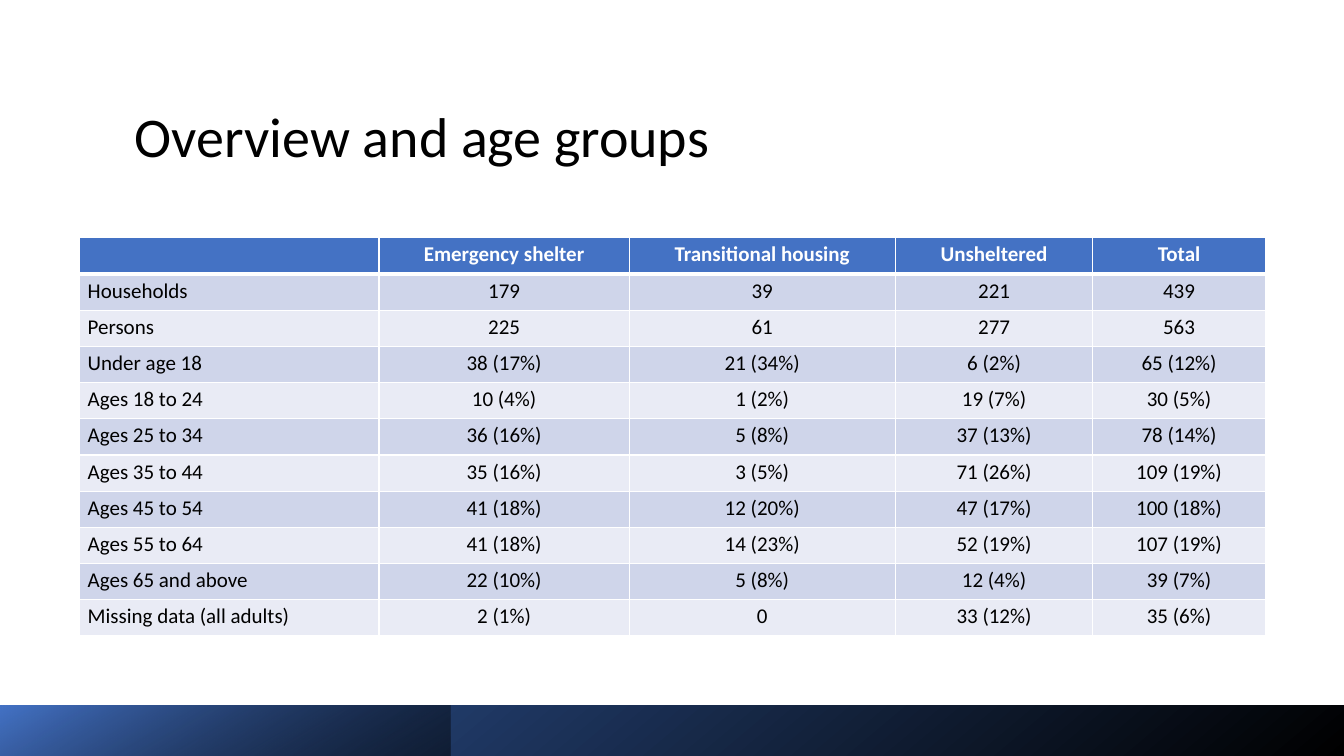
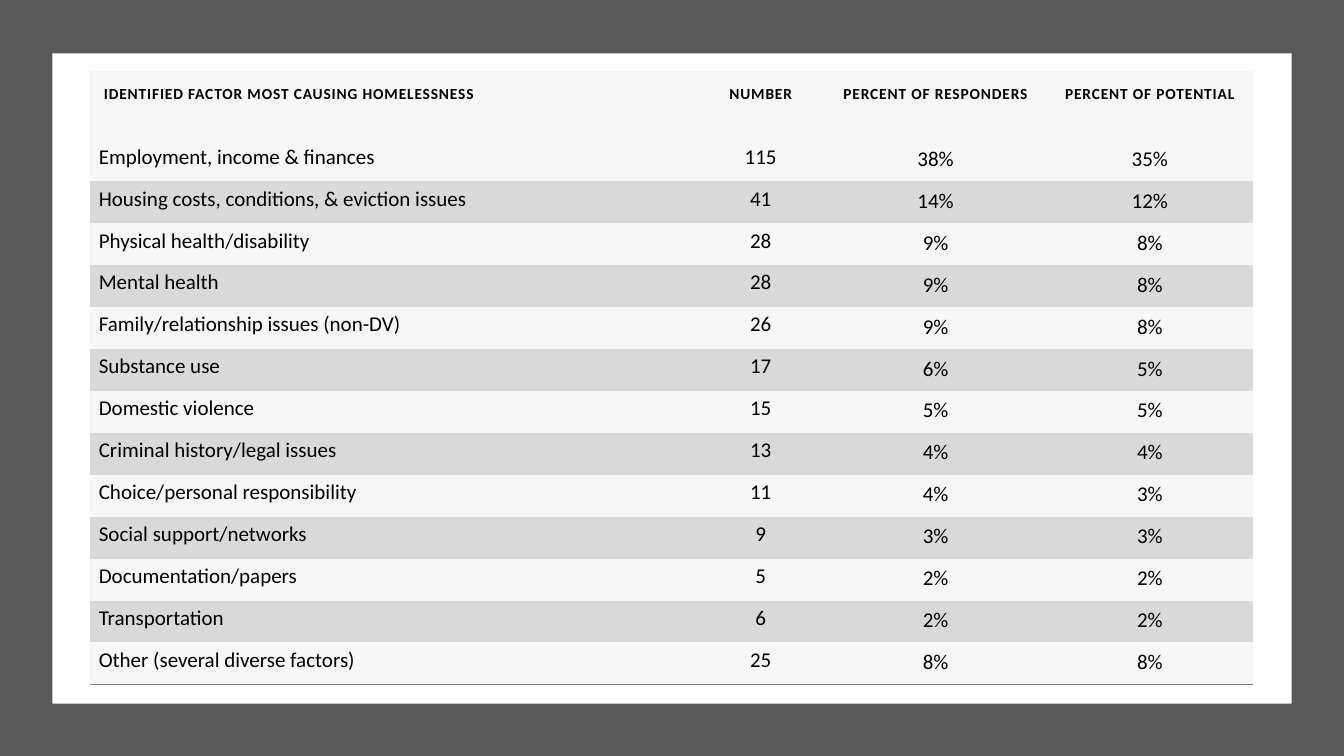
import pptx
import pptx.util
import pptx.dml.color
import pptx.enum.shapes
import pptx.enum.text
from lxml import etree

Inches, Pt = pptx.util.Inches, pptx.util.Pt
RGBColor = pptx.dml.color.RGBColor
Align, Anchor = pptx.enum.text.PP_ALIGN, pptx.enum.text.MSO_ANCHOR

# Shared look
WIDTH, HEIGHT = 13.33, 7.5
FONT = "Calibri"
BLACK = RGBColor(0x00, 0x00, 0x00)
WHITE = RGBColor(0xFF, 0xFF, 0xFF)
BLUE = RGBColor(0x44, 0x72, 0xC4)
NAVY = RGBColor(0x2F, 0x55, 0x97)
BLUE_BAND = RGBColor(0xCF, 0xD5, 0xEA)
BLUE_PALE = RGBColor(0xE9, 0xEB, 0xF5)
CHARCOAL = RGBColor(0x59, 0x59, 0x59)
GRAY = RGBColor(0x80, 0x80, 0x80)
GRAY_BAND = RGBColor(0xD9, 0xD9, 0xD9)
GRAY_PALE = RGBColor(0xF7, 0xF7, 0xF7)

TITLE_TEXT = {"size": Pt(40), "bold": False, "color": BLACK}
BODY_TEXT = {"size": Pt(15), "bold": False, "color": BLACK}
BLUE_HEADING = {"size": Pt(15), "bold": True, "color": WHITE}
SMALL_HEADING = {"size": Pt(11), "bold": True, "color": BLACK}

NO_TABLE_STYLE = "{2D5ABB26-0587-4C30-8999-92F81FD0307C}"
MARGINS = ("margin_left", "margin_top", "margin_right", "margin_bottom")
TABLE_FLAGS = {"first_row": False, "horz_banding": False}

AGE_ROWS = [
    ("", "Emergency shelter", "Transitional housing", "Unsheltered", "Total"),
    ("Households", "179", "39", "221", "439"),
    ("Persons", "225", "61", "277", "563"),
    ("Under age 18", "38 (17%)", "21 (34%)", "6 (2%)", "65 (12%)"),
    ("Ages 18 to 24", "10 (4%)", "1 (2%)", "19 (7%)", "30 (5%)"),
    ("Ages 25 to 34", "36 (16%)", "5 (8%)", "37 (13%)", "78 (14%)"),
    ("Ages 35 to 44", "35 (16%)", "3 (5%)", "71 (26%)", "109 (19%)"),
    ("Ages 45 to 54", "41 (18%)", "12 (20%)", "47 (17%)", "100 (18%)"),
    ("Ages 55 to 64", "41 (18%)", "14 (23%)", "52 (19%)", "107 (19%)"),
    ("Ages 65 and above", "22 (10%)", "5 (8%)", "12 (4%)", "39 (7%)"),
    ("Missing data (all adults)", "2 (1%)", "0", "33 (12%)", "35 (6%)"),
]

FACTOR_ROWS = [
    ("IDENTIFIED FACTOR MOST CAUSING HOMELESSNESS", "NUMBER",
     "PERCENT OF RESPONDERS", "PERCENT OF POTENTIAL"),
    ("Employment, income & finances", "115", "38%", "35%"),
    ("Housing costs, conditions, & eviction issues", "41", "14%", "12%"),
    ("Physical health/disability", "28", "9%", "8%"),
    ("Mental health", "28", "9%", "8%"),
    ("Family/relationship issues (non-DV)", "26", "9%", "8%"),
    ("Substance use", "17", "6%", "5%"),
    ("Domestic violence", "15", "5%", "5%"),
    ("Criminal history/legal issues", "13", "4%", "4%"),
    ("Choice/personal responsibility", "11", "4%", "3%"),
    ("Social support/networks", "9", "3%", "3%"),
    ("Documentation/papers", "5", "2%", "2%"),
    ("Transportation", "6", "2%", "2%"),
    ("Other (several diverse factors)", "25", "8%", "8%"),
]


def apply(target, values):
    for name, value in values.items():
        setattr(target, name, value)


def write(para, text, style):
    span = para.add_run()
    span.text = text
    span.font.name = FONT
    for name, value in style.items():
        if name == "color":
            span.font.color.rgb = value
        else:
            setattr(span.font, name, value)


def add_title(page, box, text):
    frame = page.shapes.add_textbox(*map(Inches, box)).text_frame
    apply(frame, {"word_wrap": True, "vertical_anchor": Anchor.MIDDLE})
    para = frame.paragraphs[0]
    para.line_spacing = 0.9
    write(para, text, TITLE_TEXT)


def add_panel(page, box, color=None):
    panel = page.shapes.add_shape(
        pptx.enum.shapes.MSO_SHAPE.RECTANGLE, *map(Inches, box))
    panel.shadow.inherit = False
    panel.line.fill.background()
    if color is not None:
        panel.fill.solid()
        panel.fill.fore_color.rgb = color
    return panel


def add_gradient_panel(page, box, end_color, angle, end=1.0, start_alpha=None):
    """Black to end_color; angle in degrees counter-clockwise."""
    panel = add_panel(page, box)
    panel.fill.gradient()
    panel.fill.gradient_angle = angle
    for stop, color, position in zip(panel.fill.gradient_stops, (BLACK, end_color), (0, end)):
        stop.color.rgb = color
        stop.position = position
    if start_alpha is not None:
        start = panel.element.xpath(".//a:gs/a:srgbClr")[0]
        etree.SubElement(start, pptx.oxml.ns.qn("a:alpha"), val=str(start_alpha * 1000))


def add_footer_band(page, box):
    left, top, width, height = box
    add_gradient_panel(page, box, NAVY, 130)
    add_gradient_panel(page, (left, top, width / 3 + 0.02, height), BLUE, 120,
                       end=0.99, start_alpha=46)


def border(cell, edges):
    """Draw the cell edges given as {side: (colour, points)}."""
    properties = cell._tc.get_or_add_tcPr()
    for side in "LRTB":
        if side in edges:
            color, points = edges[side]
            line = etree.SubElement(
                properties, pptx.oxml.ns.qn("a:ln" + side), w=str(Pt(points)))
            fill = etree.SubElement(line, pptx.oxml.ns.qn("a:solidFill"))
            etree.SubElement(fill, pptx.oxml.ns.qn("a:srgbClr"), val=str(color))


def fill_cell(cell, text, style, color, insets, align, anchor=Anchor.TOP):
    apply(cell, dict(zip(MARGINS, map(Inches, insets))))
    cell.vertical_anchor = anchor
    cell.fill.solid()
    cell.fill.fore_color.rgb = color
    para = cell.text_frame.paragraphs[0]
    para.alignment = align
    if text:
        write(para, text, style)
    else:
        # An empty cell must not stretch its row
        apply(cell, {"margin_top": 0, "margin_bottom": 0})


def add_grid(page, box, widths, rows, header_height):
    """Add an unstyled table whose body rows share the height below the header."""
    frame = page.shapes.add_table(len(rows), len(widths), *map(Inches, box))
    frame.element.xpath(".//a:tableStyleId")[0].text = NO_TABLE_STYLE
    apply(frame.table, TABLE_FLAGS)
    for column, width in zip(frame.table.columns, widths):
        column.width = Inches(width)
    body_height = (box[3] - header_height) / (len(rows) - 1)
    for index, row in enumerate(frame.table.rows):
        row.height = Inches(body_height if index else header_height)
    return frame


def add_age_table(page, box):
    widths = (2.97, 2.48, 2.64, 1.96, 1.71)
    table = add_grid(page, box, widths, AGE_ROWS, box[3] / len(AGE_ROWS)).table
    thin = (WHITE, 1)
    for r, values in enumerate(AGE_ROWS):
        edges = {"L": thin, "R": thin, "B": thin}
        style, color = BODY_TEXT, BLUE_BAND if r % 2 else BLUE_PALE
        if r == 0:
            edges.update(T=thin, B=(WHITE, 3))
            style, color = BLUE_HEADING, BLUE
        for c, text in enumerate(values):
            cell = table.cell(r, c)
            border(cell, edges)
            fill_cell(cell, text, style, color, (0.08, 0.04, 0.08, 0.04),
                      Align.CENTER if c else Align.LEFT)


def add_factor_table(page, box):
    frame = add_grid(page, box, (6.02, 1.27, 2.2, 2.05), FACTOR_ROWS, 0.68)
    last = len(FACTOR_ROWS) - 1
    for r, values in enumerate(FACTOR_ROWS):
        color = GRAY_BAND if r and r % 2 == 0 else GRAY_PALE
        for c, text in enumerate(values):
            cell = frame.table.cell(r, c)
            style, insets, anchor = BODY_TEXT, (0.09, 0.05, 0.09, 0.09), Anchor.TOP
            if r == 0:
                style, insets = SMALL_HEADING, (0.14,) * 4
            elif c >= 2:
                insets, anchor = (0.01, 0.01, 0.01, 0.09), Anchor.BOTTOM
            if r == last:
                border(cell, {"B": (GRAY, 1)})
            fill_cell(cell, text, style, color, insets,
                      Align.CENTER if c else Align.LEFT, anchor)
    # Letter spacing of the header row
    for properties in frame.element.xpath(".//a:tr[1]//a:rPr"):
        properties.set("spc", "60")


def build_age_slide(page):
    add_title(page, (1.24, 0.78, 11.13, 1.2), "Overview and age groups")
    add_footer_band(page, (0, 7, WIDTH, 0.51))
    add_age_table(page, (0.79, 2.36, 11.76, 3.95))


def build_factor_slide(page):
    add_panel(page, (0, 0, WIDTH, HEIGHT), CHARCOAL)
    add_panel(page, (0.52, 0.53, 12.29, 6.45), WHITE)
    add_factor_table(page, (0.89, 0.7, 11.54, 6.09))


def main():
    deck = pptx.Presentation()
    apply(deck, {"slide_width": Inches(WIDTH), "slide_height": Inches(HEIGHT)})
    for build in (build_age_slide, build_factor_slide):
        build(deck.slides.add_slide(deck.slide_layouts[6]))
    deck.save("out.pptx")


if __name__ == "__main__":
    main()
